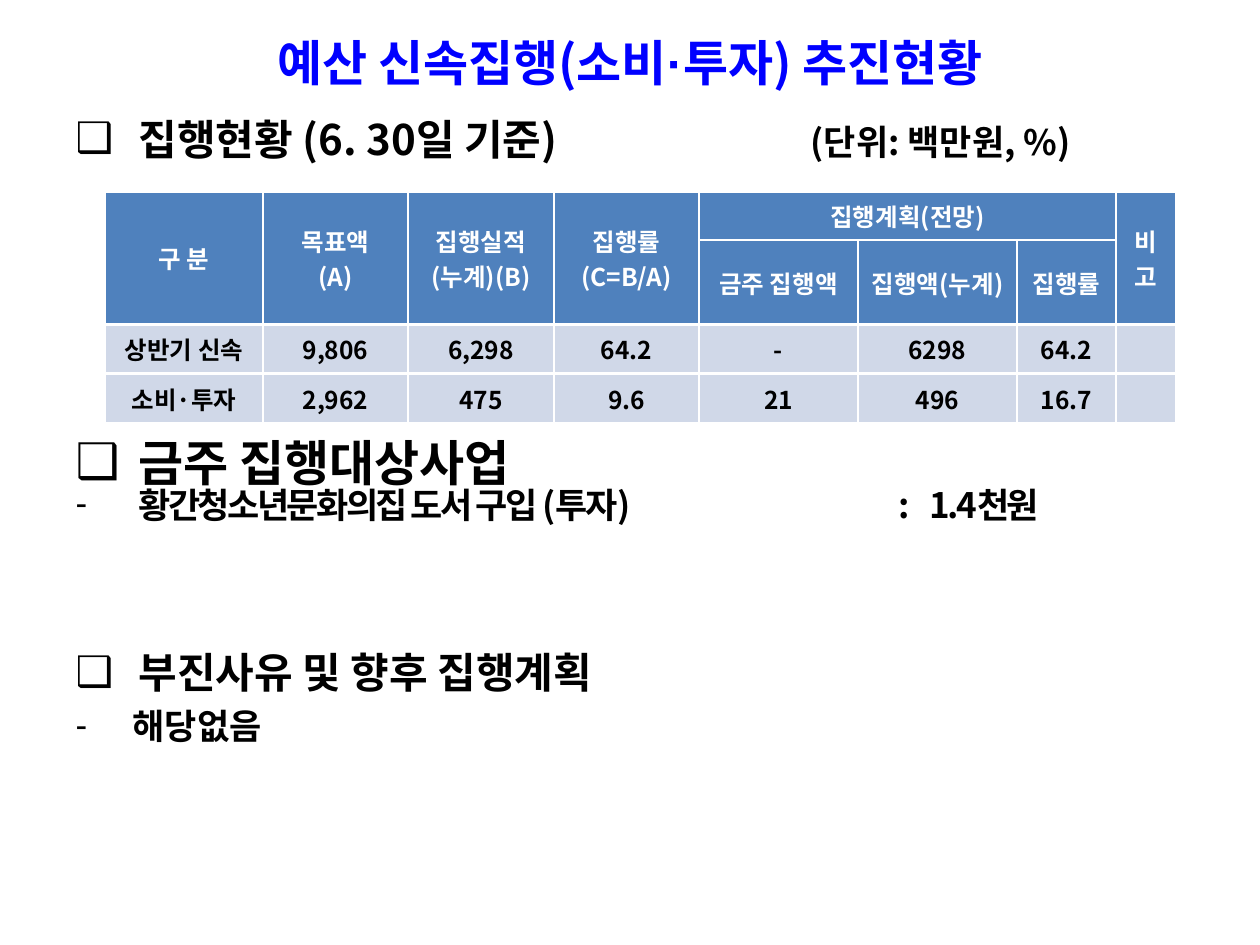
import pptx
import pptx.util
import pptx.dml.color
import pptx.enum.text
import pptx.oxml
import pptx.oxml.ns
from lxml import etree

INK = {"blue": "0000FF", "black": "000000", "white": "FFFFFF",
       "head": "4F81BD", "row": "D0D8E8"}
FACE = "Noto Sans CJK KR"

TITLE = [("예산 신속집행(소비", FACE), ("·", "Arial"), ("투자) 추진현황", FACE)]

LIST = [
    dict(mark="❑", runs=[("집행현황 (6. 30일 기준)\t", 24), ("(단위: 백만원, %)", 20)],
         left=126, hang=63, gap=0, tabs=[798]),
    dict(mark="❑", runs=[("금주 집행대상사업", 28)], left=126, hang=63, gap=269),
    dict(mark="-", runs=[("황간청소년문화의집 도서 구입 (투자)\t:\t1.4천원", 20)],
         left=126, hang=63, gap=0, tabs=[886, 917], line=0.8, track=-150),
    dict(mark="❑", runs=[("부진사유 및 향후 집행계획", 24)], left=126, hang=63, gap=122),
    dict(mark="-", runs=[("해당없음", 20)], left=120, hang=57, gap=7),
]

COLS = [158, 145, 146, 145, 159, 159, 99, 60]
ROWS = [48, 84, 49, 50]
CELLS = [
    ["구 분", "목표액\n(A)", "집행실적(누계)(B)", "집행률\n(C=B/A)", "집행계획(전망)", "", "", "비 고"],
    ["", "", "", "", "금주 집행액", "집행액(누계)", "집행률", ""],
    ["상반기 신속", "9,806", "6,298", "64.2", "-", "6298", "64.2", ""],
    ["소비·투자", "2,962", "475", "9.6", "21", "496", "16.7", ""],
]
SPANS = [(0, col, 1, col) for col in (0, 1, 2, 3, 7)] + [(0, 4, 0, 6)]
HEADS = 2


def px(num):
    return pptx.util.Emu(num * 914400 // 126)


def tone(key):
    return pptx.dml.color.RGBColor.from_string(INK[key])


def node(base, tag, **attrs):
    item = etree.SubElement(base, pptx.oxml.ns.qn(tag))
    for key, val in attrs.items():
        item.set(key, str(val))
    return item


def style(font, size, key, face=FACE):
    font.size = pptx.util.Pt(size)
    font.bold = True
    font.color.rgb = tone(key)
    font.name = face
    node(font._element, "a:ea", typeface=face)


def place(shape, left, top, wide, high):
    shape.left, shape.top, shape.width, shape.height = map(px, (left, top, wide, high))
    frame = shape.text_frame
    frame.word_wrap = True
    frame.auto_size = pptx.enum.text.MSO_AUTO_SIZE.NONE
    frame.vertical_anchor = pptx.enum.text.MSO_ANCHOR.TOP
    frame.margin_top = frame.margin_bottom = 0
    return frame


def add_item(para, item):
    para.line_spacing = item.get("line", 1.0)
    para.space_before = px(item["gap"])
    props = para._p.get_or_add_pPr()
    props.set("marL", str(px(item["left"])))
    props.set("indent", str(-px(item["hang"])))
    node(node(props, "a:buClr"), "a:srgbClr", val=INK["black"])
    node(props, "a:buFont", typeface="Arial")
    node(props, "a:buChar", char=item["mark"])
    if "tabs" in item:
        stops = node(props, "a:tabLst")
        for stop in item["tabs"]:
            node(stops, "a:tab", pos=px(stop), algn="l")
    for text, size in item["runs"]:
        run = para.add_run()
        run.text = text
        style(run.font, size, "black")
        if "track" in item:
            run.font._element.set("spc", str(item["track"]))


def edge(cell, tag, width):
    line = node(cell._tc.get_or_add_tcPr(), tag, w=pptx.util.Pt(width))
    node(node(line, "a:solidFill"), "a:srgbClr", val=INK["white"])


def add_cell(cell, text, row):
    head = row < HEADS
    cell.text = text
    cell.vertical_anchor = pptx.enum.text.MSO_ANCHOR.MIDDLE
    edge(cell, "a:lnL", 1.5)
    edge(cell, "a:lnR", 1.5)
    edge(cell, "a:lnT", 2.25 if row == HEADS else 1.5)
    edge(cell, "a:lnB", 2.25 if row == HEADS - 1 else 1.5)
    cell.fill.solid()
    cell.fill.fore_color.rgb = tone("head" if head else "row")
    for para in cell.text_frame.paragraphs:
        para.alignment = pptx.enum.text.PP_ALIGN.CENTER
        style(para.font, 14, "white" if head else "black")


def main():
    deck = pptx.Presentation()
    deck.slide_width, deck.slide_height = px(1260), px(945)
    slide = deck.slides.add_slide(deck.slide_layouts[1])

    para = place(slide.shapes.title, 0, 33, 1260, 72).paragraphs[0]
    para.alignment = pptx.enum.text.PP_ALIGN.CENTER
    for text, face in TITLE:
        run = para.add_run()
        run.text = text
        style(run.font, 28, "blue", face)

    frame = place(slide.placeholders[1], 0, 113, 1260, 800)
    for num, item in enumerate(LIST):
        add_item(frame.add_paragraph() if num else frame.paragraphs[0], item)

    grid = slide.shapes.add_table(len(ROWS), len(COLS), px(105), px(192),
                                  px(sum(COLS)), px(sum(ROWS))).table
    for col, wide in zip(grid.columns, COLS):
        col.width = px(wide)
    for row, high in zip(grid.rows, ROWS):
        row.height = px(high)
    for top, left, low, right in SPANS:
        grid.cell(top, left).merge(grid.cell(low, right))
    for row, texts in enumerate(CELLS):
        for col, text in enumerate(texts):
            add_cell(grid.cell(row, col), text, row)

    deck.save("out.pptx")


if __name__ == "__main__":
    main()
